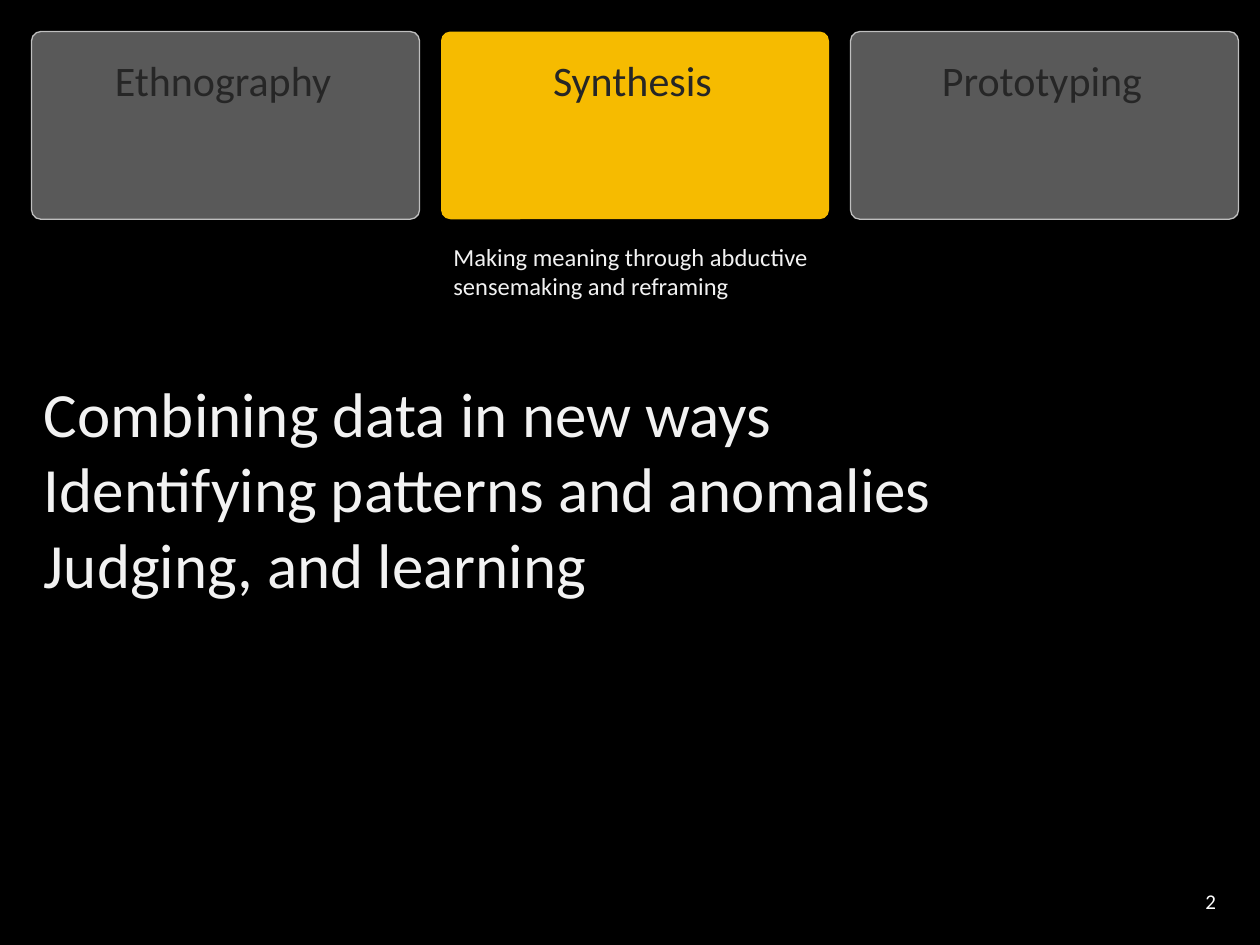
from pptx import Presentation
from pptx.dml.color import RGBColor
from pptx.enum.shapes import MSO_SHAPE
from pptx.enum.text import MSO_ANCHOR, PP_ALIGN
from pptx.util import Inches, Pt

ROUNDED = MSO_SHAPE.ROUNDED_RECTANGLE
TOP, MIDDLE = MSO_ANCHOR.TOP, MSO_ANCHOR.MIDDLE
LEFT, CENTER, RIGHT = PP_ALIGN.LEFT, PP_ALIGN.CENTER, PP_ALIGN.RIGHT

BLACK = RGBColor(0x00, 0x00, 0x00)
WHITE = RGBColor(0xFF, 0xFF, 0xFF)
OFF_WHITE = RGBColor(0xF2, 0xF2, 0xF2)
CHARCOAL = RGBColor(0x26, 0x26, 0x26)
GRAY = RGBColor(0x59, 0x59, 0x59)
SILVER = RGBColor(0xBF, 0xBF, 0xBF)
GOLD = RGBColor(0xF6, 0xBB, 0x00)
FONT = "Calibri"

PHASES = ["Ethnography", "Synthesis", "Prototyping"]
ACTIVE_PHASE = "Synthesis"
SUMMARY = "Making meaning through abductive sensemaking and reframing"
ACTIVITIES = [
    "Combining data in new ways",
    "Identifying patterns and anomalies",
    "Judging, and learning",
]
PAGE_NUMBER = "2"

MARGIN, PITCH = 0.25, 3.25
CARD_WIDTH, CARD_HEIGHT = 3.08, 1.49
LABEL_INSET = 0.13


def add_card(page, left, active):
    """Draw the rounded card behind one phase."""
    card = page.shapes.add_shape(
        ROUNDED, Inches(left), Inches(MARGIN), Inches(CARD_WIDTH), Inches(CARD_HEIGHT)
    )
    card.adjustments[0] = 0.05
    card.shadow.inherit = False
    card.fill.solid()
    card.fill.fore_color.rgb = GOLD if active else GRAY
    if active:
        card.line.fill.background()
    else:
        card.line.color.rgb = SILVER
        card.line.width = Pt(0.75)


def add_text(page, area, lines, size, color, align=LEFT, anchor=TOP, padded=True):
    """Add a text box with one paragraph per line."""
    box = page.shapes.add_textbox(*map(Inches, area))
    frame = box.text_frame
    frame.word_wrap = True
    frame.vertical_anchor = anchor
    if not padded:
        frame.margin_left = frame.margin_right = 0
        frame.margin_top = frame.margin_bottom = 0
    frame.text = "\n".join(lines)
    for para in frame.paragraphs:
        para.alignment = align
        para.font.name = FONT
        para.font.size = Pt(size)
        para.font.color.rgb = color


def main():
    """Build the synthesis phase slide."""
    deck = Presentation()
    deck.slide_width, deck.slide_height = Inches(10), Inches(7.5)
    page = deck.slides.add_slide(deck.slide_layouts.get_by_name("Blank"))
    page.background.fill.solid()
    page.background.fill.fore_color.rgb = BLACK

    for index, phase in enumerate(PHASES):
        left = MARGIN + index * PITCH
        add_card(page, left, phase == ACTIVE_PHASE)
        label_area = (left + LABEL_INSET, 0.43, 2.78, 0.4)
        add_text(page, label_area, [phase], 24, CHARCOAL, CENTER, MIDDLE, padded=False)

    active_left = MARGIN + PHASES.index(ACTIVE_PHASE) * PITCH
    add_text(page, (active_left, 1.87, CARD_WIDTH, 0.81), [SUMMARY], 14, OFF_WHITE)
    add_text(page, (MARGIN, 2.92, 9.58, 1.92), ACTIVITIES, 36, OFF_WHITE)
    add_text(page, (7.42, 6.95, 2.33, 0.4), [PAGE_NUMBER], 12, WHITE, RIGHT, MIDDLE)
    deck.save("out.pptx")


if __name__ == "__main__":
    main()
